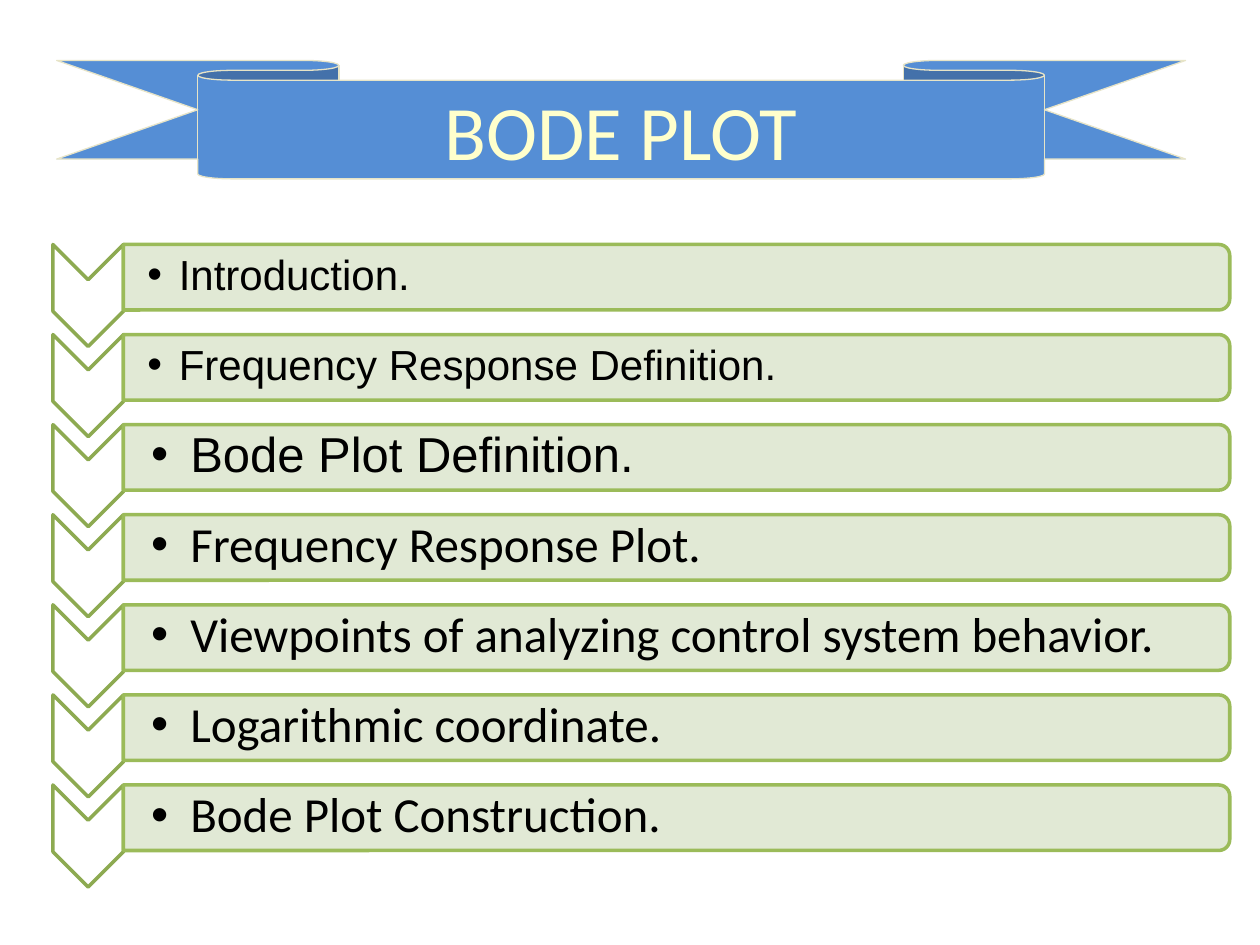
from lxml.etree import SubElement
from pptx import Presentation
from pptx.dml.color import RGBColor
from pptx.enum.shapes import MSO_SHAPE as Shape
from pptx.enum.text import MSO_ANCHOR as Anchor, PP_ALIGN as Align
from pptx.oxml.ns import qn
from pptx.util import Inches, Pt

WHITE = RGBColor(0xFF, 0xFF, 0xFF)
BLACK = RGBColor(0x00, 0x00, 0x00)
CREAM = RGBColor(0xFF, 0xFF, 0xCC)
RIBBON_BLUE = RGBColor(0x55, 0x8E, 0xD5)
RIBBON_EDGE = RGBColor(0xE7, 0xE4, 0xC7)
CHEVRON_EDGE = RGBColor(0x8D, 0xAA, 0x51)
BAR_FILL = RGBColor(0xDE, 0xE7, 0xD1)
BAR_EDGE = RGBColor(0x9B, 0xBB, 0x59)

SLIDE_WIDTH, SLIDE_HEIGHT = 10, 7.5
CHEVRON_WIDTH, CHEVRON_HEIGHT = 0.56, 0.81
BAR_HEIGHT = 0.52

# text, font, size, alignment
TOPICS = [
    ("Introduction.", "Arial", 24, Align.JUSTIFY),
    ("Frequency Response Definition.", "Arial", 24, Align.JUSTIFY),
    ("Bode Plot Definition.", "Arial", 28, Align.LEFT),
    ("Frequency Response Plot.", "Calibri", 28, Align.LEFT),
    ("Viewpoints of analyzing control system behavior.", "Calibri", 28, Align.LEFT),
    ("Logarithmic coordinate.", "Calibri", 28, Align.LEFT),
    ("Bode Plot Construction.", "Calibri", 28, Align.JUSTIFY),
]


def add_outlined(slide, kind, box, fill, edge, weight, turned=False):
    """Add a preset shape that covers box, after a quarter turn if turned."""
    left, top, width, height = box
    if turned:
        left, top = left + (width - height) / 2, top + (height - width) / 2
        width, height = height, width
    shape = slide.shapes.add_shape(kind, *map(Inches, (left, top, width, height)))
    shape.rotation = 90 if turned else 0
    shape.shadow.inherit = False
    shape.fill.solid()
    shape.fill.fore_color.rgb = fill
    shape.line.color.rgb = edge
    shape.line.width = Pt(weight)
    return shape


def write(frame, text, font, size, color, align):
    frame.word_wrap = True
    frame.vertical_anchor = Anchor.MIDDLE
    paragraph = frame.paragraphs[0]
    paragraph.alignment = align
    run = paragraph.add_run()
    run.text = text
    for name, value in {"name": font, "size": Pt(size)}.items():
        setattr(run.font, name, value)
    run.font.color.rgb = color
    return paragraph


def add_bulleted_label(slide, box, topic):
    text, font, size, align = topic
    frame = slide.shapes.add_textbox(*map(Inches, box)).text_frame
    margins = {"left": size / 127, "top": 0.02, "right": 0.02, "bottom": 0.02}
    for side, margin in margins.items():
        setattr(frame, f"margin_{side}", Inches(margin))
    paragraph = write(frame, text, font, size, BLACK, align)
    paragraph.line_spacing = 0.9
    paragraph.level = 1
    indent = Inches(0.25 if size == 24 else 0.31)
    properties = paragraph._p.get_or_add_pPr()
    properties.set("marL", str(indent))
    properties.set("indent", str(-indent))
    SubElement(properties, qn("a:buFont"), typeface="Arial")
    SubElement(properties, qn("a:buChar"), char="•")


def add_title_ribbon(slide, box):
    ribbon = add_outlined(slide, Shape.DOWN_RIBBON, box, RIBBON_BLUE, RIBBON_EDGE, 0.75)
    ribbon.adjustments[0] = 0.167
    ribbon.adjustments[1] = 0.75
    write(ribbon.text_frame, "BODE PLOT", "Calibri", 44, CREAM, Align.CENTER)


def add_topic(slide, left, top, width, topic):
    """Add a chevron with a bulleted bar to its right."""
    add_outlined(slide, Shape.CHEVRON, (left, top, CHEVRON_WIDTH, CHEVRON_HEIGHT),
                 WHITE, CHEVRON_EDGE, 2, turned=True)

    bar_left, bar_width = left + CHEVRON_WIDTH, width - CHEVRON_WIDTH
    bar = add_outlined(slide, Shape.ROUND_2_SAME_RECTANGLE,
                       (bar_left, top, bar_width, BAR_HEIGHT),
                       BAR_FILL, BAR_EDGE, 2, turned=True)
    color = bar.fill._xPr.find(qn("a:solidFill"))[0]
    SubElement(color, qn("a:alpha"), val="90000")
    add_bulleted_label(slide, (bar_left, top + 0.02, bar_width - 0.03, BAR_HEIGHT - 0.05),
                       topic)


def add_topic_list(slide, box):
    left, top, width, height = box
    pitch = (height - CHEVRON_HEIGHT) / (len(TOPICS) - 1)
    for row, topic in enumerate(TOPICS):
        add_topic(slide, left, top + row * pitch, width, topic)


def main():
    presentation = Presentation()
    presentation.slide_width = Inches(SLIDE_WIDTH)
    presentation.slide_height = Inches(SLIDE_HEIGHT)
    slide = presentation.slides.add_slide(presentation.slide_layouts[6])
    add_title_ribbon(slide, (0.45, 0.48, 8.96, 0.94))
    add_topic_list(slide, (0.42, 1.94, 9.34, 5.1))
    presentation.save("out.pptx")


if __name__ == "__main__":
    main()
